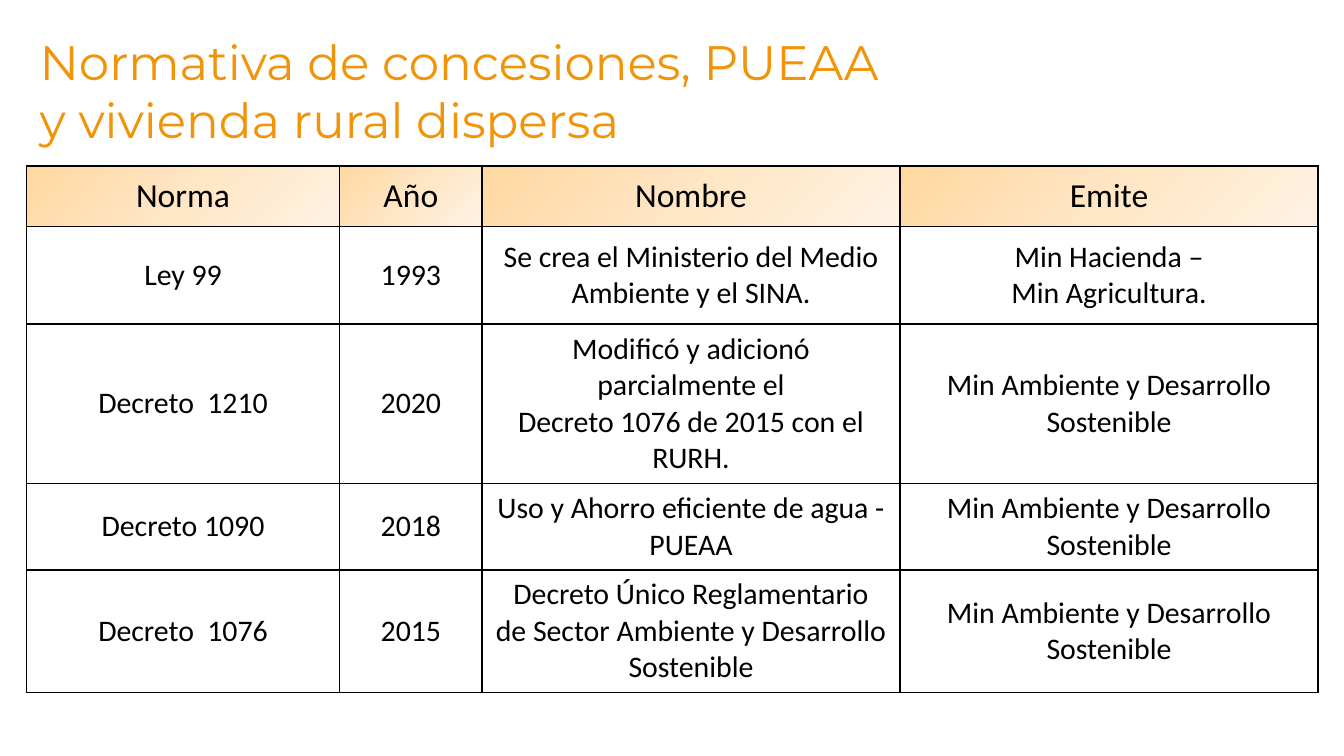
from copy import deepcopy
from dataclasses import dataclass

from lxml import etree
from pptx import Presentation
from pptx.dml.color import RGBColor
from pptx.enum.text import MSO_ANCHOR, PP_ALIGN
from pptx.oxml.ns import qn
from pptx.slide import Slide
from pptx.table import _Cell
from pptx.text.text import _Paragraph
from pptx.util import Cm, Pt

CENTER = PP_ALIGN.CENTER
MIDDLE = MSO_ANCHOR.MIDDLE
TOP = MSO_ANCHOR.TOP

ORANGE = RGBColor(0xF1, 0x94, 0x08)
BLACK = RGBColor(0x00, 0x00, 0x00)
HEADER_GRADIENT = (
    (0, RGBColor(0xFF, 0xD8, 0xA0)),
    (0.5, RGBColor(0xFF, 0xE6, 0xC5)),
    (1, RGBColor(0xFF, 0xF2, 0xE3)),
)
COLUMN_WIDTHS = (5.92, 2.69, 7.9, 7.9)
HEADINGS = ("Norma", "Año", "Nombre", "Emite")
HEADER_HEIGHT = 1.14
ENVIRONMENT_MINISTRY = ("Min Ambiente y Desarrollo Sostenible",)


@dataclass(frozen=True)
class Regulation:
    norm: str
    year: str
    title: tuple[str, ...]
    issuer: tuple[str, ...]
    height: float


REGULATIONS = (
    Regulation("Ley 99", "1993",
               ("Se crea el Ministerio del Medio Ambiente y el SINA.",),
               ("Min Hacienda –", "Min Agricultura."), 1.84),
    Regulation("Decreto  1210", "2020",
               ("Modificó y adicionó parcialmente el",
                "Decreto 1076 de 2015 con el RURH."),
               ENVIRONMENT_MINISTRY, 3.02),
    Regulation("Decreto 1090", "2018",
               ("Uso y Ahorro eficiente de agua - PUEAA",),
               ENVIRONMENT_MINISTRY, 1.63),
    Regulation("Decreto  1076", "2015",
               ("Decreto Único Reglamentario de Sector Ambiente y Desarrollo Sostenible",),
               ENVIRONMENT_MINISTRY, 2.32),
)


def add_run(paragraph: _Paragraph, text: str, font: str, size: float, color: RGBColor) -> None:
    run = paragraph.add_run()
    run.text = text
    run.font.name = font
    run.font.size = Pt(size)
    run.font.color.rgb = color


def add_title(slide: Slide, text: str) -> None:
    shape = slide.shapes.add_textbox(Cm(0.5), Cm(0.48), Cm(16.9), Cm(3.15))
    frame = shape.text_frame
    frame.word_wrap = True
    frame.vertical_anchor = TOP
    add_run(frame.paragraphs[0], text, "Montserrat", 25.9, ORANGE)


def add_borders(cell: _Cell) -> None:
    properties = cell._tc.get_or_add_tcPr()
    for position, side in enumerate(("lnL", "lnR", "lnT", "lnB")):
        border = etree.Element(qn(f"a:{side}"), w=str(Pt(1)))
        fill = etree.SubElement(border, qn("a:solidFill"))
        etree.SubElement(fill, qn("a:srgbClr"), val=str(BLACK))
        properties.insert(position, border)


def fill_header(cell: _Cell) -> None:
    cell.fill.gradient()
    cell.fill.gradient_angle = 315
    stop_list = cell._tc.tcPr.find(f".//{qn('a:gsLst')}")
    stop_list.insert(1, deepcopy(stop_list[0]))
    for stop, (position, color) in zip(cell.fill.gradient_stops, HEADER_GRADIENT):
        stop.position = position
        stop.color.rgb = color


def write_cell(cell: _Cell, lines: tuple[str, ...], size: float) -> None:
    cell.vertical_anchor = MIDDLE
    frame = cell.text_frame
    for index, line in enumerate(lines):
        paragraph = frame.add_paragraph() if index else frame.paragraphs[0]
        paragraph.alignment = CENTER
        add_run(paragraph, line, "Calibri", size, BLACK)
    add_borders(cell)


def add_regulation_table(slide: Slide) -> None:
    heights = (HEADER_HEIGHT, *(regulation.height for regulation in REGULATIONS))
    table = slide.shapes.add_table(
        len(heights), len(HEADINGS), Cm(0.5), Cm(3.14),
        Cm(sum(COLUMN_WIDTHS)), Cm(sum(heights)),
    ).table
    table.first_row = False
    table.horz_banding = False
    for column, width in zip(table.columns, COLUMN_WIDTHS):
        column.width = Cm(width)
    for row, height in zip(table.rows, heights):
        row.height = Cm(height)
    for column, heading in enumerate(HEADINGS):
        cell = table.cell(0, column)
        fill_header(cell)
        write_cell(cell, (heading,), 18)
    for row, regulation in enumerate(REGULATIONS, start=1):
        contents = ((regulation.norm,), (regulation.year,), regulation.title, regulation.issuer)
        for column, lines in enumerate(contents):
            cell = table.cell(row, column)
            cell.fill.background()
            write_cell(cell, lines, 16)


def main() -> None:
    presentation = Presentation()
    presentation.slide_width = Cm(25.4)
    presentation.slide_height = Cm(14.29)
    slide = presentation.slides.add_slide(presentation.slide_layouts[6])
    add_title(slide, "Normativa de concesiones, PUEAA y vivienda rural dispersa")
    add_regulation_table(slide)
    presentation.save("out.pptx")


if __name__ == "__main__":
    main()
